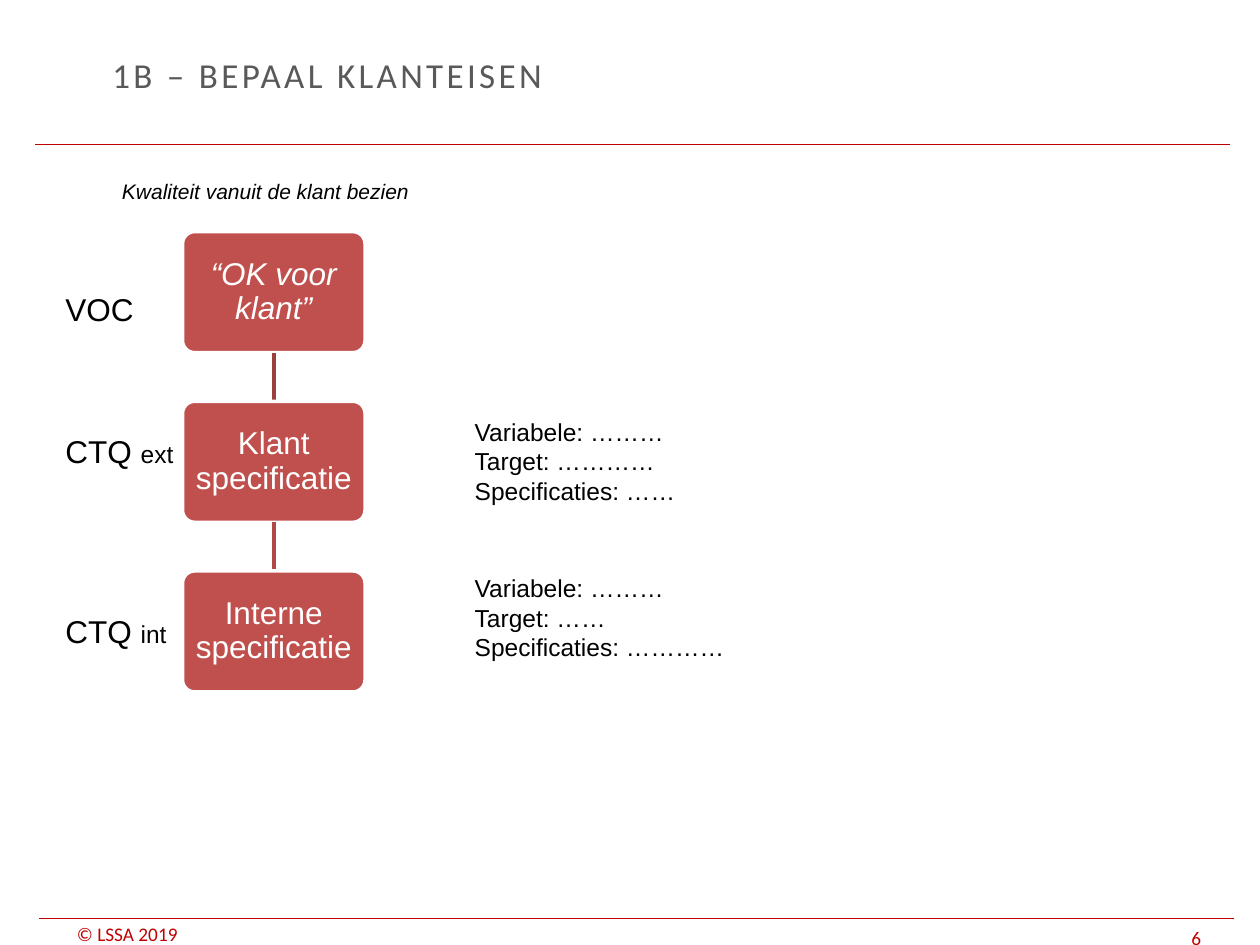
from lxml.etree import SubElement
from pptx import Presentation
from pptx.dml.color import RGBColor
from pptx.enum.shapes import MSO_CONNECTOR as Connector, MSO_SHAPE as Shape
from pptx.enum.text import MSO_ANCHOR as Anchor, PP_ALIGN as Align
from pptx.oxml.ns import qn
from pptx.util import Cm, Pt

COLORS = {"red": "C00000", "title": "595959", "text": "000000", "white": "FFFFFF",
          "block": "C0504D", "link 1": "9A403E", "link 2": "AE4946"}

TITLE = "1B – BEPAAL KLANTEISEN"
SUBTITLE = "Kwaliteit vanuit de klant bezien"
# Block text, italic
BLOCKS = [("“OK voor klant”", True), ("Klant specificatie", False), ("Interne specificatie", False)]
# Top in cm, label, small suffix
LABELS = [(5.72, "VOC", ""), (8.59, "CTQ ", "ext"), (12.22, "CTQ ", "int")]
# Top, width and height in cm, lines
DETAILS = [
    (8.28, 9.32, 2.64, ["Variabele: ………", "Target: …………", "Specificaties: ……"]),
    (11.43, 9.09, 2.06, ["Variabele: ………", "Target: ……", "Specificaties: …………"]),
]
# Left, top, width and height in cm, text
FOOTERS = [(1.3, 18.59, 3.61, 0.46, "© LSSA 2019"), (23.77, 18.57, 1.63, 0.56, "6")]
# Left and top in cm
RULES = [(0.71, 2.92), (0.79, 18.52)]
RULE_WIDTH = 24.08

BLOCK_LEFT, BLOCK_TOP, BLOCK_WIDTH, BLOCK_HEIGHT = 3.68, 4.67, 3.68, 2.44
BLOCK_PITCH = 3.42


def color(name):
    return RGBColor.from_string(COLORS[name])


def add_run(para, text, size, tint="text", face="Arial", italic=False):
    run = para.add_run()
    run.text = text
    run.font.size = Pt(size)
    run.font.name = face
    run.font.italic = italic
    run.font.color.rgb = color(tint)
    return run


def add_box(slide, left, top, width, height):
    box = slide.shapes.add_textbox(Cm(left), Cm(top), Cm(width), Cm(height))
    box.text_frame.word_wrap = True
    return box.text_frame


def add_line(slide, start, end, tint, weight):
    line = slide.shapes.add_connector(Connector.STRAIGHT, *map(Cm, start + end))
    line.line.color.rgb = color(tint)
    line.line.width = Pt(weight)
    SubElement(line._element.spPr, qn("a:effectLst"))


def add_title(slide):
    title = slide.shapes.title
    title.left, title.top, title.width, title.height = map(Cm, (2.01, 0.66, 18.01, 1.68))
    title.text_frame.vertical_anchor = Anchor.MIDDLE
    para = title.text_frame.paragraphs[0]
    para.alignment = Align.LEFT
    run = add_run(para, TITLE, 20, "title", "Calibri")
    run.font._element.set("spc", "190")


def add_frame(slide):
    """Add the red rules and the footer texts."""
    for left, top in RULES:
        add_line(slide, (left, top), (left + RULE_WIDTH, top), "red", 0.75)
    for left, top, width, height, text in FOOTERS:
        frame = add_box(slide, left, top, width, height)
        frame.word_wrap = False
        frame.margin_top = frame.margin_bottom = 0
        frame.vertical_anchor = Anchor.BOTTOM
        add_run(frame.paragraphs[0], text, 11, "red", "Calibri")


def add_block(slide, top, text, italic):
    block = slide.shapes.add_shape(Shape.ROUNDED_RECTANGLE, Cm(BLOCK_LEFT), Cm(top),
                                   Cm(BLOCK_WIDTH), Cm(BLOCK_HEIGHT))
    block.adjustments[0] = 0.1
    block.shadow.inherit = False
    block.fill.solid()
    block.fill.fore_color.rgb = color("block")
    block.line.color.rgb = color("white")
    block.line.width = Pt(2)
    frame = block.text_frame
    frame.word_wrap = True
    frame.vertical_anchor = Anchor.MIDDLE
    frame.margin_left = frame.margin_right = Cm(0.15)
    para = frame.paragraphs[0]
    para.alignment = Align.CENTER
    para.line_spacing = 0.9
    add_run(para, text, 18, "white", italic=italic)


def add_details(slide, top, width, height, lines):
    panel = slide.shapes.add_shape(Shape.RECTANGLE, Cm(9.32), Cm(top), Cm(width), Cm(height))
    panel.shadow.inherit = False
    panel.fill.solid()
    panel.fill.fore_color.rgb = color("white")
    panel.line.fill.background()
    frame = panel.text_frame
    frame.word_wrap = True
    frame.vertical_anchor = Anchor.TOP
    for index, text in enumerate(lines):
        para = frame.add_paragraph() if index else frame.paragraphs[0]
        para.alignment = Align.LEFT
        add_run(para, text, 14)


def main():
    deck = Presentation()
    deck.slide_width, deck.slide_height = Cm(25.4), Cm(19.05)
    slide = deck.slides.add_slide(deck.slide_layouts[5])

    add_frame(slide)
    add_title(slide)
    subtitle = add_box(slide, 2.21, 3.48, 7.19, 0.76)
    add_run(subtitle.paragraphs[0], SUBTITLE, 12, italic=True)

    for top, label, suffix in LABELS:
        para = add_box(slide, 1.07, top, 3.81, 1.02).paragraphs[0]
        add_run(para, label, 18)
        if suffix:
            add_run(para, suffix, 14)
    for detail in DETAILS:
        add_details(slide, *detail)

    center = BLOCK_LEFT + BLOCK_WIDTH / 2
    for index, (text, italic) in enumerate(BLOCKS):
        top = BLOCK_TOP + index * BLOCK_PITCH
        if index:
            link_top = top - BLOCK_PITCH + BLOCK_HEIGHT
            add_line(slide, (center, link_top), (center, top), f"link {index}", 2)
        add_block(slide, top, text, italic)

    deck.save("out.pptx")


if __name__ == "__main__":
    main()
